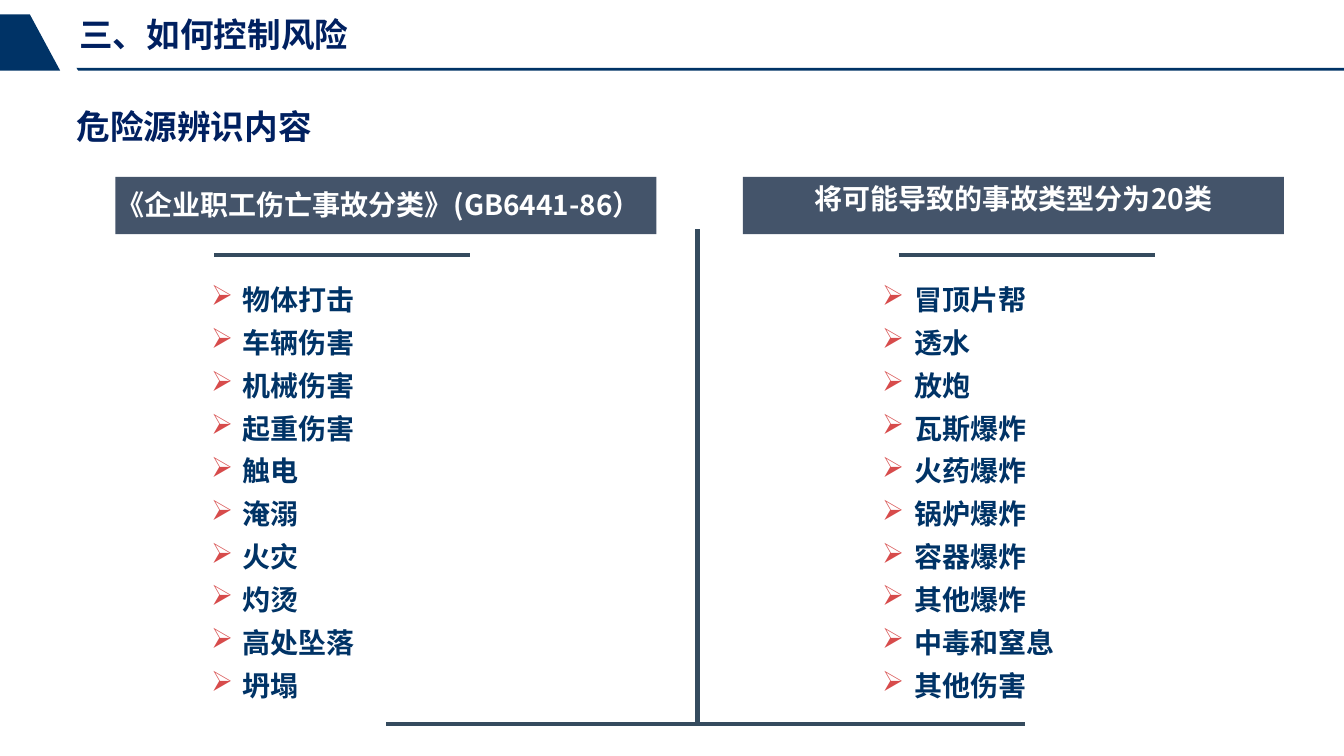
from collections import namedtuple
from dataclasses import dataclass

from lxml.etree import SubElement
from pptx import Presentation
from pptx.dml.color import RGBColor
from pptx.enum.shapes import MSO_CONNECTOR, MSO_SHAPE
from pptx.enum.text import MSO_ANCHOR, PP_ALIGN
from pptx.oxml.ns import qn
from pptx.util import Pt

Box = namedtuple("Box", "left top width height")


@dataclass(frozen=True)
class Theme:
    navy: str = "003366"
    title: str = "002060"
    bar: str = "44546A"
    rule: str = "354B5E"
    arrow: str = "D74B4B"
    white: str = "FFFFFF"
    title_size: float = 25.3
    body_size: float = 21.1
    body_leading: float = 32.3
    latin_title: str = "Arial"
    font: str = "Noto Sans CJK SC"


THEME = Theme()

INJURIES = ["物体打击", "车辆伤害", "机械伤害", "起重伤害", "触电",
            "淹溺", "火灾", "灼烫", "高处坠落", "坍塌"]
HAZARDS = ["冒顶片帮", "透水", "放炮", "瓦斯爆炸", "火药爆炸",
           "锅炉爆炸", "容器爆炸", "其他爆炸", "中毒和窒息", "其他伤害"]


def add_bullet(paragraph, symbol, color, indent):
    properties = paragraph._p.get_or_add_pPr()
    properties.set("marL", str(Pt(indent)))
    properties.set("indent", str(-Pt(indent)))
    bullet_color = SubElement(properties, qn("a:buClr"))
    SubElement(bullet_color, qn("a:srgbClr"), val=color)
    SubElement(properties, qn("a:buChar"), char=symbol)


def add_text(slide, box, lines, *, size, color, font=THEME.font,
             align=PP_ALIGN.LEFT, inset=(7.2, 3.6), leading=None,
             space_after=None, bullet=None):
    frame = slide.shapes.add_textbox(*map(Pt, box)).text_frame
    frame.word_wrap = True
    frame.vertical_anchor = MSO_ANCHOR.TOP
    frame.margin_left = frame.margin_right = Pt(inset[0])
    frame.margin_top = frame.margin_bottom = Pt(inset[1])
    for index, line in enumerate(lines):
        paragraph = frame.paragraphs[0] if index == 0 else frame.add_paragraph()
        paragraph.alignment = align
        if leading:
            paragraph.line_spacing = Pt(leading)
        if space_after:
            paragraph.space_after = Pt(space_after)
        if bullet:
            add_bullet(paragraph, bullet, THEME.arrow, 24)
        run = paragraph.add_run()
        run.text = line
        run.font.size = Pt(size)
        run.font.bold = True
        run.font.name = font
        run.font.color.rgb = RGBColor.from_string(color)
        SubElement(run._r.get_or_add_rPr(), qn("a:ea"), typeface=THEME.font)


def paint(shape, color):
    shape.shadow.inherit = False
    shape.fill.solid()
    shape.fill.fore_color.rgb = RGBColor.from_string(color)
    shape.line.fill.background()


def add_outline(slide, points, color):
    start, *rest = [(Pt(x), Pt(y)) for x, y in points]
    builder = slide.shapes.build_freeform(*start)
    builder.add_line_segments(rest, close=True)
    paint(builder.convert_to_shape(), color)


def add_rule(slide, start, end, weight):
    rule = slide.shapes.add_connector(
        MSO_CONNECTOR.STRAIGHT, *map(Pt, (*start, *end)))
    rule.line.color.rgb = RGBColor.from_string(THEME.rule)
    rule.line.width = Pt(weight)
    SubElement(rule._element.spPr, qn("a:effectLst"))


def add_title(slide, box, title):
    add_text(slide, box, [title], size=THEME.title_size, color=THEME.title,
             font=THEME.latin_title, inset=(0, 0), space_after=6)


def add_header(slide, box, title):
    left, top, width, height = box
    right, bottom = left + width, top + height
    add_outline(slide, [(left + 57.6, bottom - 2.2), (right, bottom - 2.2),
                        (right, bottom), (left + 59, bottom)], THEME.navy)
    add_outline(slide, [(left + 22.5, top), (left + 45.4, bottom),
                        (left, bottom), (left, top)], THEME.navy)
    add_title(slide, Box(left + 59.8, top, 327, 31), title)


def add_column(slide, box, heading, items, *, heading_box, rule_offset, list_offset):
    left, top, width, height = box
    bar = slide.shapes.add_shape(
        MSO_SHAPE.RECTANGLE, *map(Pt, (left, top, width, 43.2)))
    paint(bar, THEME.bar)
    add_text(slide, heading_box, [heading], size=THEME.body_size,
             color=THEME.white, align=PP_ALIGN.CENTER)
    rule_left, rule_top = left + rule_offset, top + 59
    add_rule(slide, (rule_left, rule_top), (rule_left + 193, rule_top), 3)
    list_top = top + 69.1
    add_text(slide, Box(left + list_offset, list_top, 232, top + height - list_top),
             items, size=THEME.body_size, color=THEME.navy,
             leading=THEME.body_leading, bullet="➢")


def add_divider(slide, box):
    left, top, width, height = box
    center, bottom = left + width * 0.487, top + height
    add_rule(slide, (center, top), (center, bottom), 4)
    add_rule(slide, (left, bottom), (left + width, bottom), 3)


def build_slide(presentation):
    slide = presentation.slides.add_slide(presentation.slide_layouts[6])
    add_header(slide, Box(0, 10.8, 1012.32, 42.5), "三、如何控制风险")
    add_title(slide, Box(57.6, 79.9, 327, 31), "危险源辨识内容")
    add_divider(slide, Box(290.9, 172.8, 481, 372.7))
    left_column = Box(86.9, 133.2, 407.5, 396)
    right_column = left_column._replace(left=559.5)
    add_column(slide, left_column, "《企业职工伤亡事故分类》(GB6441-86）", INJURIES,
               heading_box=Box(68.4, 137.5, 434, 33),
               rule_offset=74.4, list_offset=65)
    add_column(slide, right_column, "将可能导致的事故类型分为20类", HAZARDS,
               heading_box=right_column._replace(height=33),
               rule_offset=117.3, list_offset=97.9)


def main():
    presentation = Presentation()
    presentation.slide_width = Pt(1012.32)
    presentation.slide_height = Pt(569.52)
    build_slide(presentation)
    presentation.save("out.pptx")


if __name__ == "__main__":
    main()
